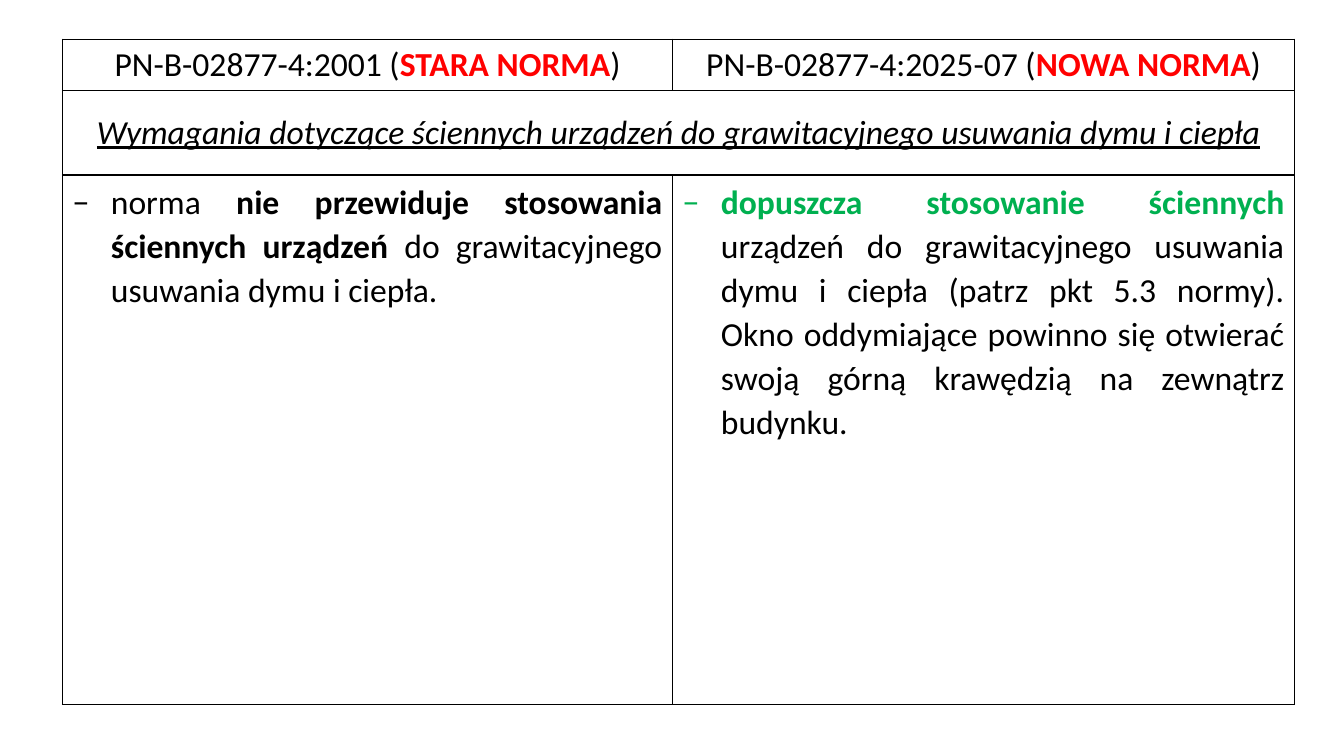
from lxml.etree import SubElement
from pptx import Presentation
from pptx.dml.color import RGBColor
from pptx.enum.text import MSO_ANCHOR, PP_ALIGN
from pptx.oxml.ns import qn
from pptx.util import Inches, Pt

SLIDE_WIDTH, SLIDE_HEIGHT = 13.33, 7.5
TABLE_LEFT, TABLE_TOP = 0.62, 0.39
COLUMN_WIDTHS = [6.05, 6.17]
ROW_HEIGHTS = [0.49, 0.84, 5.25]
BLACK, WHITE, RED, GREEN = "000000", "FFFFFF", "FF0000", "00B050"
BULLET_INDENT = 0.38


def color(hex_value):
    return RGBColor.from_string(hex_value)


def add_run(paragraph, text, hex_value=BLACK, bold=False, emphasis=False):
    run = paragraph.add_run()
    run.text = text
    font = run.font
    font.name, font.size = "Calibri", Pt(24)
    font.bold, font.italic, font.underline = bold, emphasis, emphasis
    font.color.rgb = color(hex_value)


def format_cell(cell):
    """White fill with a thin black line on all four sides."""
    cell.fill.solid()
    cell.fill.fore_color.rgb = color(WHITE)
    properties = cell._tc.get_or_add_tcPr()
    for position, side in enumerate(("lnL", "lnR", "lnT", "lnB")):
        line = SubElement(properties, qn(f"a:{side}"), w=str(Pt(1)))
        line_fill = SubElement(line, qn("a:solidFill"))
        SubElement(line_fill, qn("a:srgbClr"), val=BLACK)
        properties.insert(position, line)


def fill_heading(cell, runs):
    cell.vertical_anchor = MSO_ANCHOR.MIDDLE
    paragraph = cell.text_frame.paragraphs[0]
    paragraph.alignment = PP_ALIGN.CENTER
    for text, options in runs:
        add_run(paragraph, text, **options)


def fill_bullet(cell, runs):
    cell.vertical_anchor = MSO_ANCHOR.TOP
    paragraph = cell.text_frame.paragraphs[0]
    paragraph.alignment = PP_ALIGN.JUSTIFY
    paragraph.line_spacing = 1.07
    properties = paragraph._p.get_or_add_pPr()
    properties.set("marL", str(Inches(BULLET_INDENT)))
    properties.set("indent", str(-Inches(BULLET_INDENT)))
    SubElement(properties, qn("a:buFont"), typeface="Calibri")
    SubElement(properties, qn("a:buChar"), char="−")
    for text, options in runs:
        add_run(paragraph, text, **options)


def add_comparison_table(slide):
    frame = slide.shapes.add_table(
        len(ROW_HEIGHTS), len(COLUMN_WIDTHS),
        Inches(TABLE_LEFT), Inches(TABLE_TOP),
        Inches(sum(COLUMN_WIDTHS)), Inches(sum(ROW_HEIGHTS)))
    table = frame.table
    table.first_row = table.horz_banding = False
    for column, width in zip(table.columns, COLUMN_WIDTHS):
        column.width = Inches(width)
    for row, height in zip(table.rows, ROW_HEIGHTS):
        row.height = Inches(height)
    for cell in table.iter_cells():
        format_cell(cell)
    table.cell(1, 0).merge(table.cell(1, 1))
    return table


def main():
    presentation = Presentation()
    presentation.slide_width = Inches(SLIDE_WIDTH)
    presentation.slide_height = Inches(SLIDE_HEIGHT)
    slide = presentation.slides.add_slide(presentation.slide_layouts[6])
    table = add_comparison_table(slide)

    # Standards being compared
    standards = [("PN-B-02877-4:2001", "STARA NORMA"),
                 ("PN-B-02877-4:2025-07", "NOWA NORMA")]
    for column, (number, status) in enumerate(standards):
        fill_heading(table.cell(0, column), [
            (f"{number} (", {}),
            (status, {"hex_value": RED, "bold": True}),
            (")", {})])

    # Topic across both columns
    fill_heading(table.cell(1, 0), [
        ("Wymagania dotyczące ściennych urządzeń do grawitacyjnego "
         "usuwania dymu i ciepła", {"emphasis": True})])

    # Requirements of each standard
    fill_bullet(table.cell(2, 0), [
        ("norma", {}),
        (" nie przewiduje stosowania ściennych urządzeń ", {"bold": True}),
        ("do grawitacyjnego usuwania dymu i ciepła.", {})])
    fill_bullet(table.cell(2, 1), [
        ("dopuszcza stosowanie ściennych ",
         {"hex_value": GREEN, "bold": True}),
        ("urządzeń do grawitacyjnego usuwania dymu i ciepła "
         "(patrz pkt 5.3 normy). Okno oddymiające powinno się otwierać "
         "swoją górną krawędzią na zewnątrz budynku.", {})])

    presentation.save("out.pptx")


if __name__ == "__main__":
    main()
